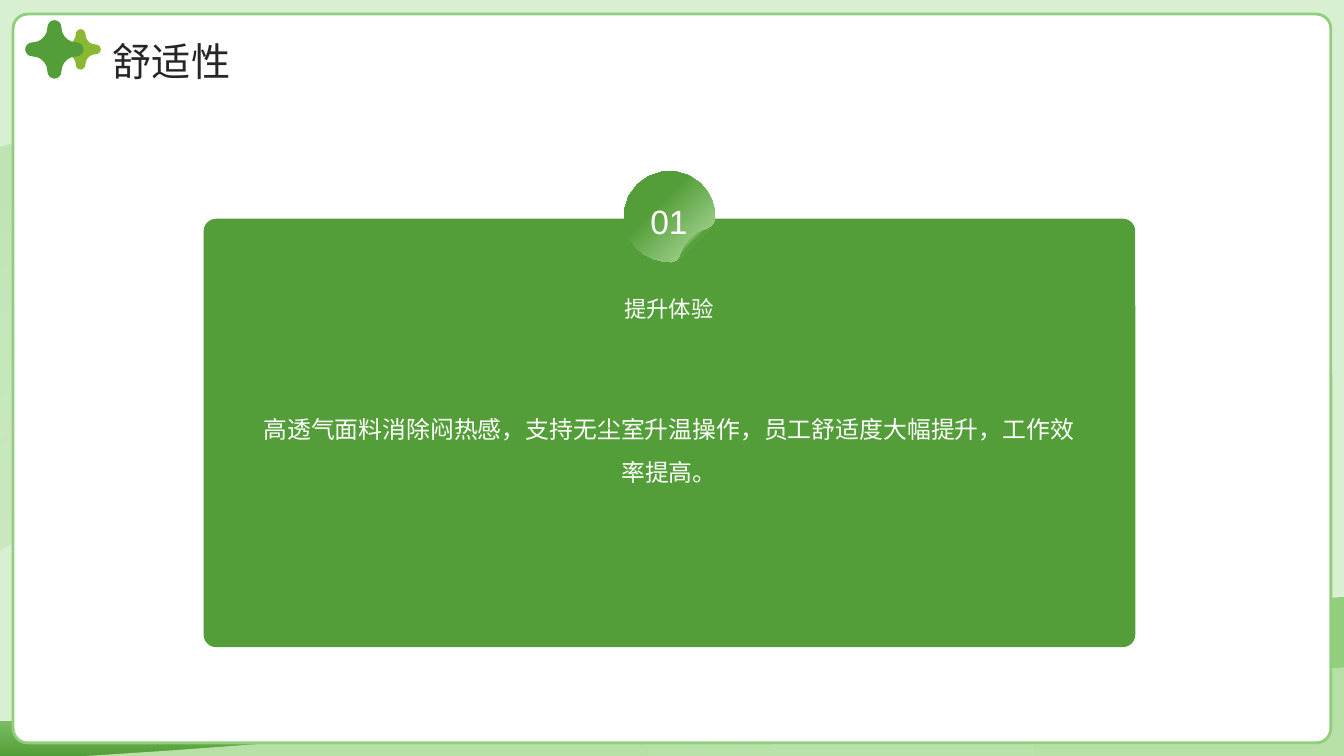
"""Build the comfort slide: a framed page with one numbered green card."""
from math import dist

from lxml import etree
from pptx import Presentation
from pptx.dml.color import RGBColor
from pptx.enum.shapes import MSO_SHAPE
from pptx.enum.text import MSO_ANCHOR, PP_ALIGN
from pptx.oxml.ns import qn
from pptx.util import Inches, Pt

RECT, ROUNDED = MSO_SHAPE.RECTANGLE, MSO_SHAPE.ROUNDED_RECTANGLE
LEFT, CENTER = PP_ALIGN.LEFT, PP_ALIGN.CENTER
TOP, MIDDLE = MSO_ANCHOR.TOP, MSO_ANCHOR.MIDDLE

COLORS = {
    "mist": "D9EFD2", "pale": "B6E0A6", "leaf": "92CF7C", "green": "549E39",
    "lime": "8AB833", "white": "FFFFFF", "ink": "262626",
}
FONT = "Arial"


def write_text(frame, text, size, color, align=LEFT, anchor=TOP, spacing=1.0):
    frame.word_wrap = True
    frame.vertical_anchor = anchor
    paragraph = frame.paragraphs[0]
    paragraph.alignment = align
    paragraph.line_spacing = spacing
    run = paragraph.add_run()
    run.text = text
    run.font.name = FONT
    run.font.size = Pt(size)
    run.font.color.rgb = RGBColor.from_string(COLORS[color])


def flatten(outline):
    points = [outline[0]]
    for segment in outline[1:]:
        if len(segment) == 2:
            points.append(segment)
            continue
        start, first, second, end = points[-1], segment[:2], segment[2:4], segment[4:]
        steps = min(12, 4 + int(2 * dist(start, end)))
        for step in range(1, steps + 1):
            t = step / steps
            u = 1 - t
            points.append(tuple(
                u**3 * a + 3 * u * u * t * b + 3 * u * t * t * c + t**3 * d
                for a, b, c, d in zip(start, first, second, end)))
    return points


def star_outline(x, y, radius):
    arm = [(0.75, -0.24), (0.47, -0.24, 0.24, -0.47, 0.24, -0.75),
           (0.24, -0.89, 0.13, -1, 0, -1), (-0.13, -1, -0.24, -0.89, -0.24, -0.75)]
    points = flatten(arm)[:-1]
    outline = []
    for _ in range(4):
        outline += [(x + radius * px, y + radius * py) for px, py in points]
        points = [(py, -px) for px, py in points]
    return outline


class SlideBuilder:
    def __init__(self, slide):
        self.slide = slide

    def paint(self, shape, color, alpha=100):
        shape.shadow.inherit = False
        shape.line.fill.background()
        shape.fill.solid()
        shape.fill.fore_color.rgb = RGBColor.from_string(COLORS[color])
        if alpha < 100:
            tint = shape._element.spPr.find(qn("a:solidFill"))[0]
            etree.SubElement(tint, qn("a:alpha"), val=str(alpha * 1000))

    def gradient(self, shape, stops, angle=None):
        shape.fill.gradient()
        grad = shape._element.spPr.find(qn("a:gradFill"))
        grad.clear()
        stop_list = etree.SubElement(grad, qn("a:gsLst"))
        for position, color, alpha in stops:
            stop = etree.SubElement(stop_list, qn("a:gs"), pos=str(position * 1000))
            tint = etree.SubElement(stop, qn("a:srgbClr"), val=COLORS[color])
            if alpha < 100:
                etree.SubElement(tint, qn("a:alpha"), val=str(alpha * 1000))
        if angle is None:
            radial = etree.SubElement(grad, qn("a:path"), path="circle")
            etree.SubElement(radial, qn("a:fillToRect"), r="100000", b="100000")
        else:
            etree.SubElement(grad, qn("a:lin"), ang=str(angle * 60000), scaled="0")

    def panel(self, box, color, kind=RECT, corner=None, border=None):
        shape = self.slide.shapes.add_shape(kind, *map(Inches, box))
        self.paint(shape, color)
        if corner is not None:
            shape.adjustments[0] = corner
        if border:
            shape.line.color.rgb = RGBColor.from_string(COLORS[border])
            shape.line.width = Pt(2)

    def outline(self, outline, color="green", alpha=100, stops=None, angle=None):
        start, *rest = [(Inches(x), Inches(y)) for x, y in flatten(outline)]
        builder = self.slide.shapes.build_freeform(*start, scale=1.0)
        builder.add_line_segments(rest, close=True)
        shape = builder.convert_to_shape()
        self.paint(shape, color, alpha)
        if stops:
            self.gradient(shape, stops, angle)

    def label(self, box, text, **style):
        textbox = self.slide.shapes.add_textbox(*map(Inches, box))
        write_text(textbox.text_frame, text, **style)


def draw_background(page):
    page.panel((0, 0, 13.33, 7.5), "mist")
    hill = [(13.33, 5.92), (13.33, 7.5), (0, 7.5), (0, 7.16), (0.13, 7.16),
            (4.08, 7.09, 9.13, 6.34, 12.7, 5.98)]
    page.outline(hill, angle=90,
                 stops=[(0, "leaf", 100), (65, "leaf", 100), (100, "green", 100)])
    meadow = [(13.33, 6.62), (13.33, 7.5), (0.85, 7.5), (1.62, 7.45),
              (5.62, 7.16, 9.43, 6.89, 12.83, 6.66)]
    page.outline(meadow, "pale")
    arch = [(2.35, 1.12), (1.65, 1.12, 0.97, 1.21, 0.33, 1.38), (0, 1.47), (0, 5.47),
            (0.05, 5.44), (0.72, 5.03, 1.51, 4.8, 2.35, 4.8),
            (4.12, 4.8, 5.64, 5.82, 6.36, 7.31), (6.44, 7.5), (10.28, 7.5),
            (10.21, 7.21), (9.31, 3.71, 6.13, 1.12, 2.35, 1.12)]
    page.outline(arch, angle=45,
                 stops=[(0, "leaf", 37), (85, "mist", 10), (100, "mist", 10)])
    page.panel((0.13, 0.14, 13.07, 7.23), "white", ROUNDED, 0.02, "leaf")


def draw_card(page):
    page.panel((2.02, 2.17, 9.24, 4.25), "green", ROUNDED, 0.029)
    page.label((2.43, 3.92, 8.41, 2.33),
               "高透气面料消除闷热感，支持无尘室升温操作，员工舒适度大幅提升，工作效率提高。",
               size=17, color="white", align=CENTER, spacing=1.5)
    page.label((2.43, 2.67, 8.41, 0.76), "提升体验",
               size=16, color="white", align=CENTER, anchor=MIDDLE, spacing=1.1)


def draw_badge(page):
    backing = [(6.73, 2.56), (7.05, 2.24), (7.07, 2.22, 7.08, 2.19, 7.08, 2.16),
               (7.09, 2.04, 7.04, 1.92, 6.95, 1.83), (6.77, 1.66, 6.5, 1.66, 6.32, 1.83),
               (6.15, 2.01, 6.15, 2.29, 6.32, 2.46), (6.41, 2.55, 6.54, 2.6, 6.65, 2.59),
               (6.68, 2.59, 6.71, 2.58, 6.73, 2.56)]
    page.outline(backing, "lime", alpha=80)
    sticker = [(6.72, 2.57), (7.06, 2.23), (7.08, 2.21, 7.09, 2.19, 7.09, 2.17),
               (7.1, 2.04, 7.05, 1.92, 6.95, 1.82), (6.77, 1.65, 6.49, 1.66, 6.32, 1.83),
               (6.14, 2.01, 6.14, 2.29, 6.32, 2.47), (6.41, 2.56, 6.54, 2.6, 6.66, 2.6),
               (6.68, 2.6, 6.7, 2.59, 6.72, 2.57)]
    page.outline(sticker,
                 stops=[(0, "green", 100), (36, "green", 100), (100, "pale", 100)])
    curl = [(6.85, 2.37), (6.75, 2.47, 6.77, 2.54, 6.72, 2.59), (7.06, 2.25),
            (7.01, 2.3, 6.94, 2.27, 6.85, 2.37)]
    page.outline(curl, angle=45,
                 stops=[(0, "leaf", 100), (32, "leaf", 100), (47, "green", 100),
                        (63, "leaf", 100), (100, "leaf", 100)])
    page.label((6.19, 1.9, 0.89, 0.5), "01",
               size=24, color="white", align=CENTER, spacing=1.1)


def draw_heading(page):
    page.label((1.02, 0.18, 11.38, 0.57), "舒适性", size=28, color="ink", spacing=1.3)
    page.outline(star_outline(0.8, 0.49, 0.2), "lime")
    page.outline(star_outline(0.54, 0.49, 0.29), "green")


def main():
    deck = Presentation()
    deck.slide_width, deck.slide_height = Inches(13.33), Inches(7.5)
    page = SlideBuilder(deck.slides.add_slide(deck.slide_layouts[6]))
    draw_background(page)
    draw_card(page)
    draw_badge(page)
    draw_heading(page)
    deck.save("out.pptx")


if __name__ == "__main__":
    main()
